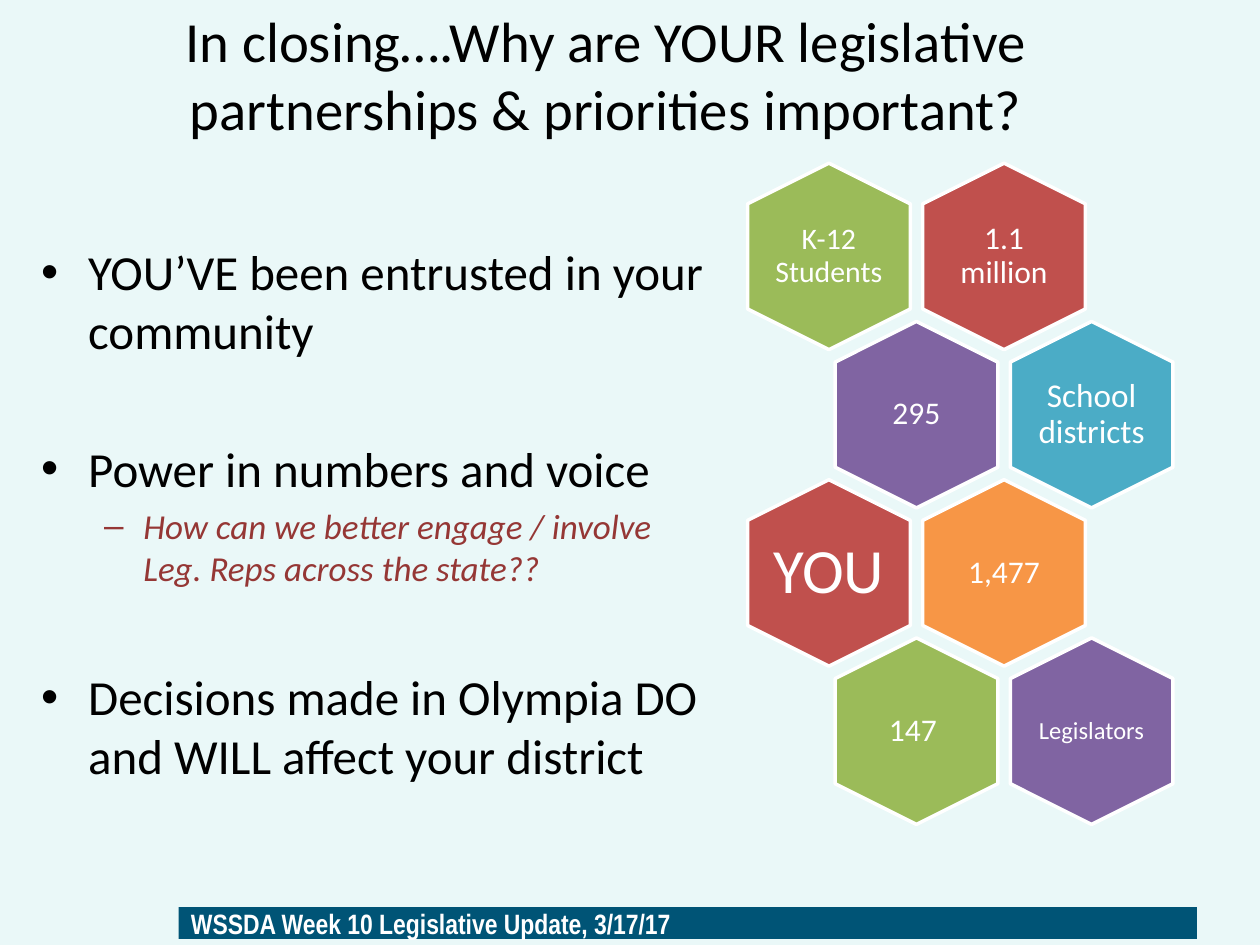
from dataclasses import dataclass

import pptx
import pptx.dml.color
import pptx.enum.shapes
import pptx.enum.text
import pptx.oxml.ns
import pptx.util
from lxml import etree

Cm, Pt = pptx.util.Cm, pptx.util.Pt
ALIGN = pptx.enum.text.PP_ALIGN
ANCHOR = pptx.enum.text.MSO_ANCHOR
SHAPE = pptx.enum.shapes.MSO_SHAPE


@dataclass(frozen=True)
class Theme:
    font: str = "Calibri"
    footer_font: str = "Arial Narrow"
    background: str = "EAF8F8"
    bar: str = "005476"
    text: str = "000000"
    light: str = "FFFFFF"
    accent: str = "953735"
    red: str = "C0504D"
    green: str = "9BBB59"
    purple: str = "8064A2"
    teal: str = "4BACC6"
    orange: str = "F79646"
    title_size: float = 32.4
    body_size: float = 28
    sub_size: float = 20
    footer_size: float = 16


T = Theme()

# Each row: (text, type size, fill) from left to right
HEXAGONS = [
    [("K-12 Students", 17, T.green), ("1.1 million", 18, T.red)],
    [("295", 18, T.purple), ("School districts", 19, T.teal)],
    [("YOU", 36, T.red), ("1,477", 18, T.orange)],
    [("147 ", 18, T.green), ("Legislators", 14, T.purple)],
]


def rgb(value):
    return pptx.dml.color.RGBColor.from_string(value)


def write(p, text, *, size, color=T.text, font=T.font, bold=False, italic=False,
          align=ALIGN.LEFT, line=1.0, before=0):
    p.alignment, p.line_spacing, p.space_before = align, line, Pt(before)
    r = p.add_run()
    r.text = text
    r.font.name, r.font.size = font, Pt(size)
    r.font.bold, r.font.italic = bold, italic
    r.font.color.rgb = rgb(color)


def set_bullet(p, char, left, hanging):
    pPr = p._p.get_or_add_pPr()
    pPr.set("marL", str(Cm(left)))
    pPr.set("indent", str(-Cm(hanging)))
    for tag, attr, value in (("a:buFont", "typeface", "Arial"),
                             ("a:buChar", "char", char)):
        etree.SubElement(pPr, pptx.oxml.ns.qn(tag)).set(attr, value)


def add_text_frame(slide, box, anchor=ANCHOR.MIDDLE, inset=None):
    tf = slide.shapes.add_textbox(*map(Cm, box)).text_frame
    tf.word_wrap = True
    tf.auto_size = pptx.enum.text.MSO_AUTO_SIZE.NONE
    tf.vertical_anchor = anchor
    if inset is not None:
        tf.margin_left = tf.margin_right = Cm(inset)
        tf.margin_top = tf.margin_bottom = Cm(inset)
    return tf


def add_filled_shape(slide, kind, box, fill):
    sp = slide.shapes.add_shape(kind, *map(Cm, box))
    sp.shadow.inherit = False
    sp.fill.solid()
    sp.fill.fore_color.rgb = rgb(fill)
    sp.line.fill.background()
    return sp


def add_footer(slide):
    sp = add_filled_shape(slide, SHAPE.RECTANGLE, (3.6, 18.29, 20.53, 0.64), T.bar)
    tf = sp.text_frame
    tf.vertical_anchor = ANCHOR.MIDDLE
    write(tf.paragraphs[0], "WSSDA Week 10 Legislative Update, 3/17/17",
          size=T.footer_size, color=T.light, font=T.footer_font, bold=True)


def add_title(slide):
    tf = add_text_frame(slide, (0.64, 0.64, 23.14, 1.7))
    write(tf.paragraphs[0],
          "In closing….Why are YOUR legislative partnerships & priorities important?",
          size=T.title_size, align=ALIGN.CENTER)


def add_body(slide):
    tf = add_text_frame(slide, (0.58, 4.75, 14, 12.47), anchor=ANCHOR.TOP)
    main = dict(size=T.body_size)
    sub = dict(size=T.sub_size, color=T.accent, italic=True)
    items = [
        ("YOU’VE been entrusted in your community", 0, "•", 0.95, 0.95, main),
        ("Power in numbers and voice", 45, "•", 0.95, 0.95, main),
        ("How can we better engage / involve Leg. Reps across the state??",
         4, "–", 2.06, 0.79, sub),
        ("Decisions made in Olympia DO and WILL affect your district",
         45, "•", 0.95, 0.95, main),
    ]
    for i, (text, before, char, left, hanging, style) in enumerate(items):
        p = tf.add_paragraph() if i else tf.paragraphs[0]
        write(p, text, before=before, **style)
        set_bullet(p, char, left, hanging)


def add_hexagon(slide, x, y, text, size, fill):
    """Draw a pointed-top hexagon with an upright label, centred on (x, y)."""
    w, h = 3.76, 3.28
    sp = add_filled_shape(slide, SHAPE.HEXAGON, (x - w / 2, y - h / 2, w, h), fill)
    sp.rotation = 90
    sp.adjustments[0], sp.adjustments[1] = 0.25, 1.1547
    sp.line.color.rgb = rgb(T.light)
    sp.line.width = Pt(2)
    w, h = 2.26, 2.6
    tf = add_text_frame(slide, (x - w / 2, y - h / 2, w, h), inset=0)
    write(tf.paragraphs[0], text, size=size, color=T.light,
          align=ALIGN.CENTER, line=0.9)


def add_honeycomb(slide):
    """Lay out the rows, moving every second one right by half a column."""
    left, top, column, row_height = 16.71, 5.17, 3.53, 3.19
    for i, row in enumerate(HEXAGONS):
        for j, cell in enumerate(row):
            add_hexagon(slide, left + column * (j + i % 2 / 2),
                        top + row_height * i, *cell)


def main():
    prs = pptx.Presentation()
    prs.slide_width, prs.slide_height = Cm(25.4), Cm(19.05)
    slide = prs.slides.add_slide(prs.slide_layouts[6])
    slide.background.fill.solid()
    slide.background.fill.fore_color.rgb = rgb(T.background)
    add_footer(slide)
    add_title(slide)
    add_body(slide)
    add_honeycomb(slide)
    prs.save("out.pptx")


if __name__ == "__main__":
    main()
